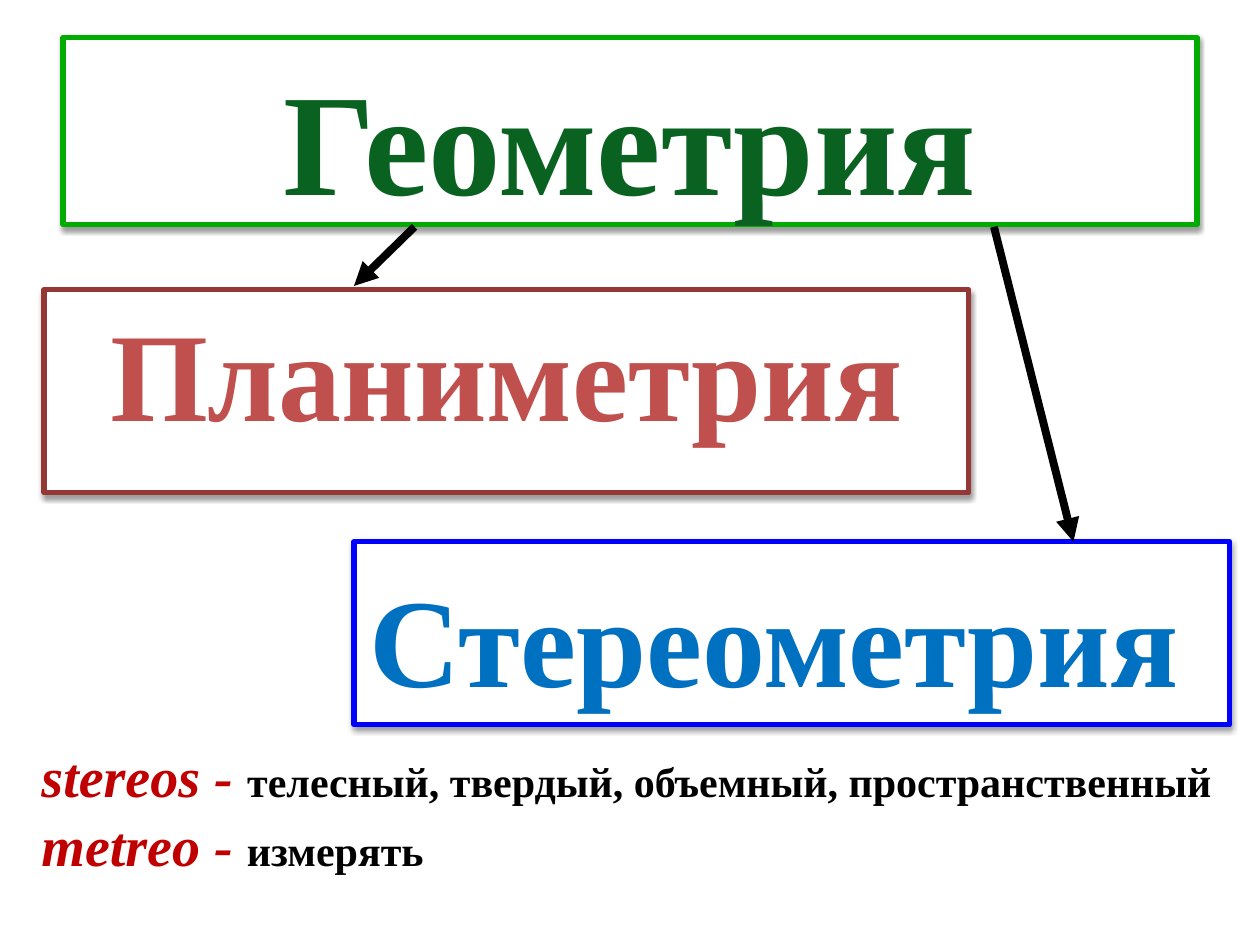
"""Build a slide that divides geometry into planimetry and stereometry."""
import lxml.etree
import pptx
import pptx.dml.color
import pptx.enum.shapes
import pptx.enum.text
import pptx.oxml
import pptx.oxml.ns
import pptx.util

Pt = pptx.util.Pt
RGBColor = pptx.dml.color.RGBColor
ANCHOR = pptx.enum.text.MSO_ANCHOR
ALIGN = pptx.enum.text.PP_ALIGN
qn = pptx.oxml.ns.qn

WHITE = RGBColor(0xFF, 0xFF, 0xFF)
BLACK = RGBColor(0, 0, 0)
DARK_GREEN = RGBColor(0x0A, 0x62, 0x21)
GREEN = RGBColor(0, 0xAC, 0)
BROWN = RGBColor(0x95, 0x37, 0x35)
BRICK = RGBColor(0xC0, 0x50, 0x4D)
BLUE = RGBColor(0, 0, 0xFF)
SKY = RGBColor(0, 0x70, 0xC0)
RED = RGBColor(0xC0, 0, 0)
SERIF = "Times New Roman"
SHADOW = (
    '<a:effectLst xmlns:a="http://schemas.openxmlformats.org/drawingml/2006/main">'
    '<a:outerShdw blurRad="39370" dist="20320" dir="5400000" rotWithShape="0">'
    '<a:srgbClr val="000000"><a:alpha val="38000"/></a:srgbClr>'
    "</a:outerShdw></a:effectLst>"
)


def add_span(para, text, color, **formats):
    span = para.add_run()
    span.text = text
    span.font.color.rgb = color
    for name, value in ({"name": SERIF, "bold": True} | formats).items():
        setattr(span.font, name, value)


deck = pptx.Presentation()
deck.slide_width, deck.slide_height = Pt(720), Pt(540)
page = deck.slides.add_slide(deck.slide_layouts[6])

terms = [
    ("Геометрия", (36, 21.6, 648, 106.6), GREEN, DARK_GREEN, 82.8, 0,
     {"vertical_anchor": ANCHOR.BOTTOM, "margin_left": 0, "margin_right": 0,
      "margin_bottom": 0}),
    ("Планиметрия", (25.2, 165.6, 528.5, 116), BROWN, BRICK, 72, 9,
     {"vertical_anchor": ANCHOR.TOP}),
    ("Стереометрия", (202.3, 309.6, 500.4, 104.4), BLUE, SKY, 72, 9,
     {"vertical_anchor": ANCHOR.TOP}),
]
for term, place, border, color, size, space, frame_formats in terms:
    box = page.shapes.add_shape(
        pptx.enum.shapes.MSO_SHAPE.RECTANGLE, *map(Pt, place))
    box.fill.solid()
    box.fill.fore_color.rgb = WHITE
    box.line.color.rgb = border
    box.line.width = Pt(3)
    box.shadow.inherit = False
    effects = box.element.spPr.find(qn("a:effectLst"))
    box.element.spPr.replace(effects, pptx.oxml.parse_xml(SHADOW))
    frame = box.text_frame
    for name, value in ({"word_wrap": True} | frame_formats).items():
        setattr(frame, name, value)
    para = frame.paragraphs[0]
    para.alignment = ALIGN.CENTER
    para.space_before = Pt(space)
    add_span(para, term, color, size=Pt(size))
add_span(para, " ", color, size=Pt(80), italic=True)

for ends in [(236.9, 129.6, 202.3, 163.4), (568, 129.6, 613.4, 309.6)]:
    arrow = page.shapes.add_connector(
        pptx.enum.shapes.MSO_CONNECTOR.STRAIGHT, *map(Pt, ends))
    arrow.line.color.rgb = BLACK
    arrow.line.width = Pt(4.5)
    lxml.etree.SubElement(arrow.line._get_or_add_ln(), qn("a:tailEnd"), type="triangle")
    lxml.etree.SubElement(arrow.element.spPr, qn("a:effectLst"))

notes = page.shapes.add_textbox(Pt(16.6), Pt(416.2), Pt(691.9), Pt(89.3))
notes.text_frame.word_wrap = True
para = notes.text_frame.paragraphs[0]
add_span(para, "stereos -", RED, size=Pt(32), italic=True)
add_span(para, " ", RED, size=Pt(36), italic=True, name="Calibri")
add_span(para, "телесный, твердый, объемный, пространственный", BLACK, size=Pt(24))
para = notes.text_frame.add_paragraph()
add_span(para, "metreo - ", RED, size=Pt(32), italic=True)
add_span(para, "измерять", BLACK, size=Pt(24))
add_span(para, " ", RED, size=Pt(32), italic=True, name="TeX Gyre Schola")

deck.save("out.pptx")
